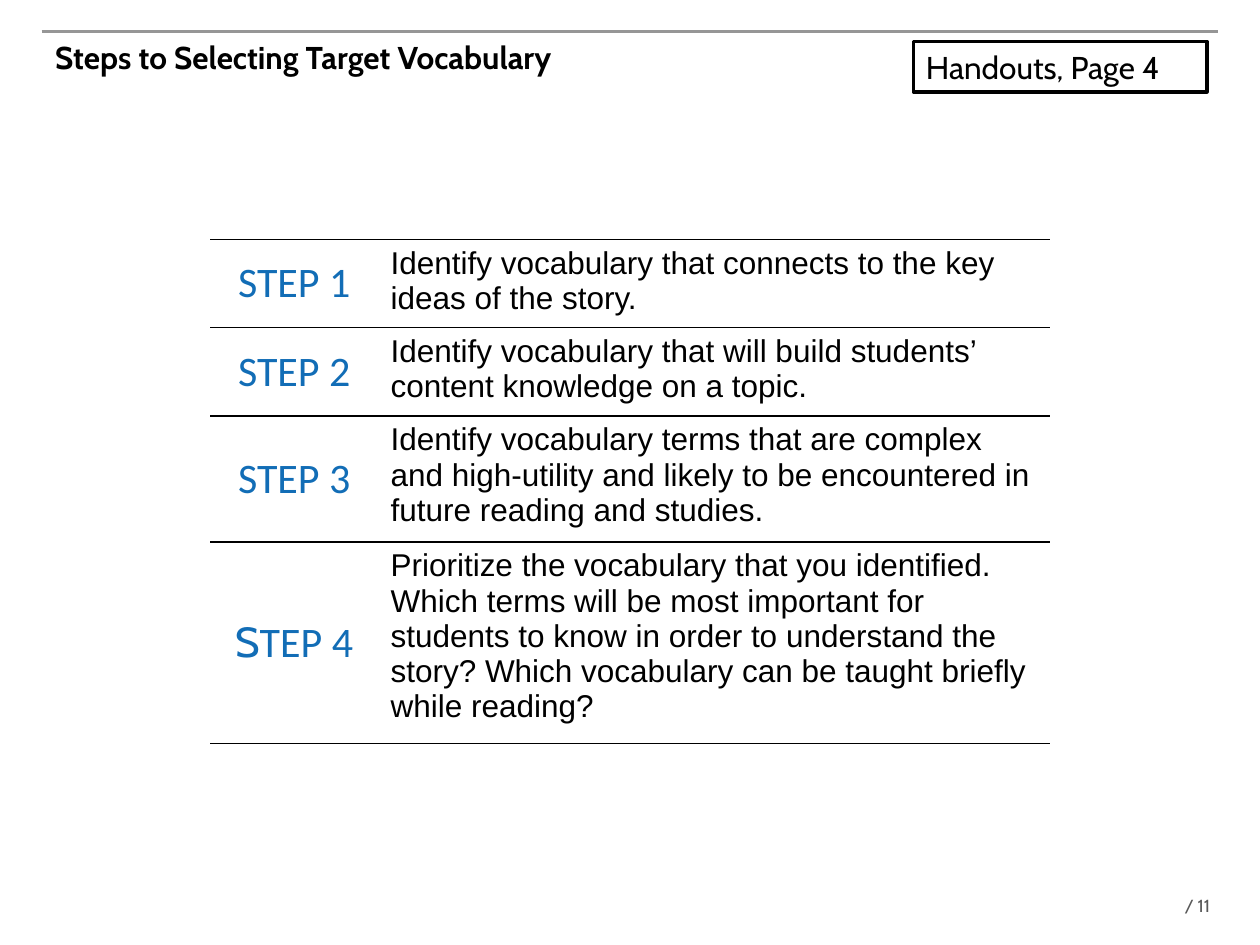
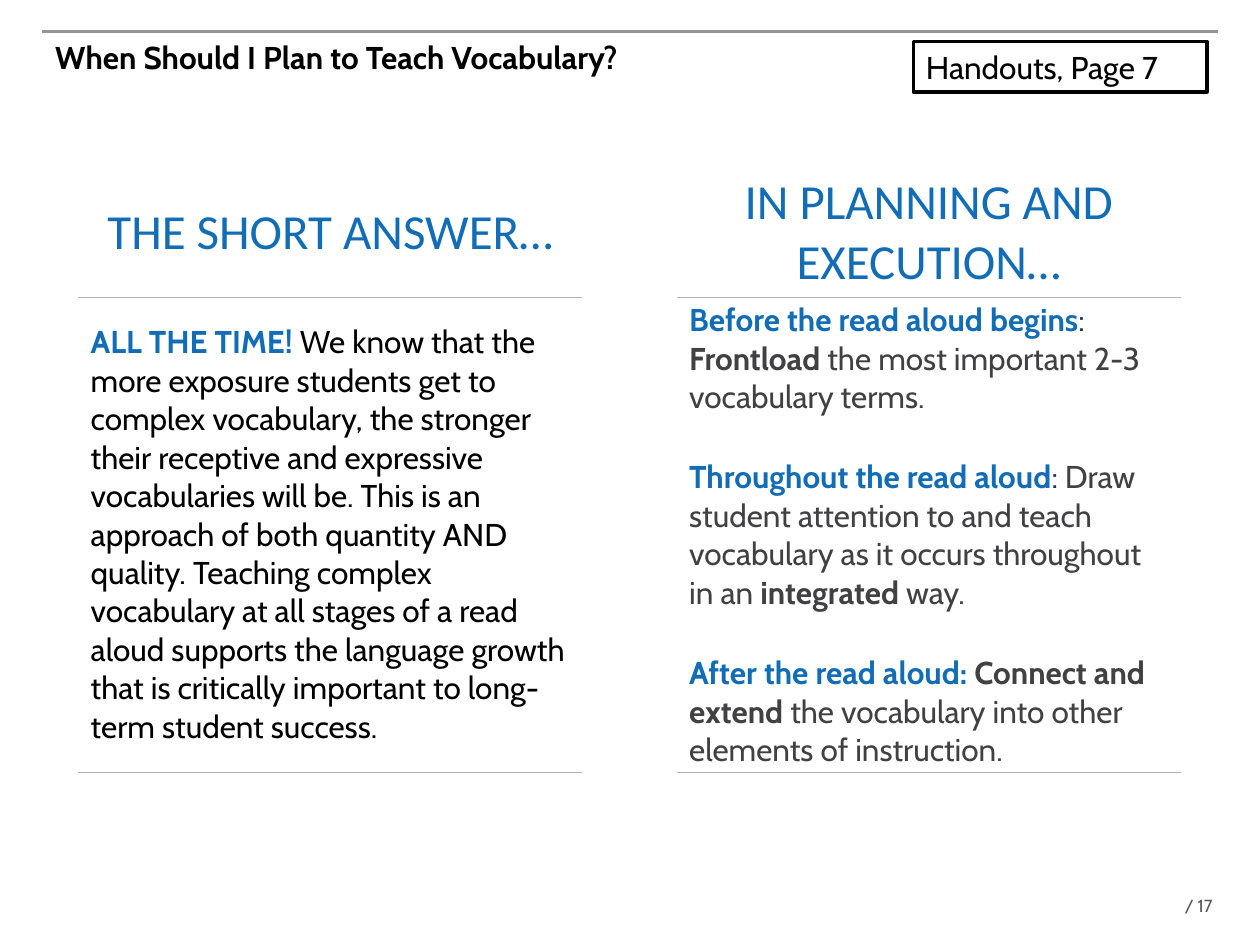
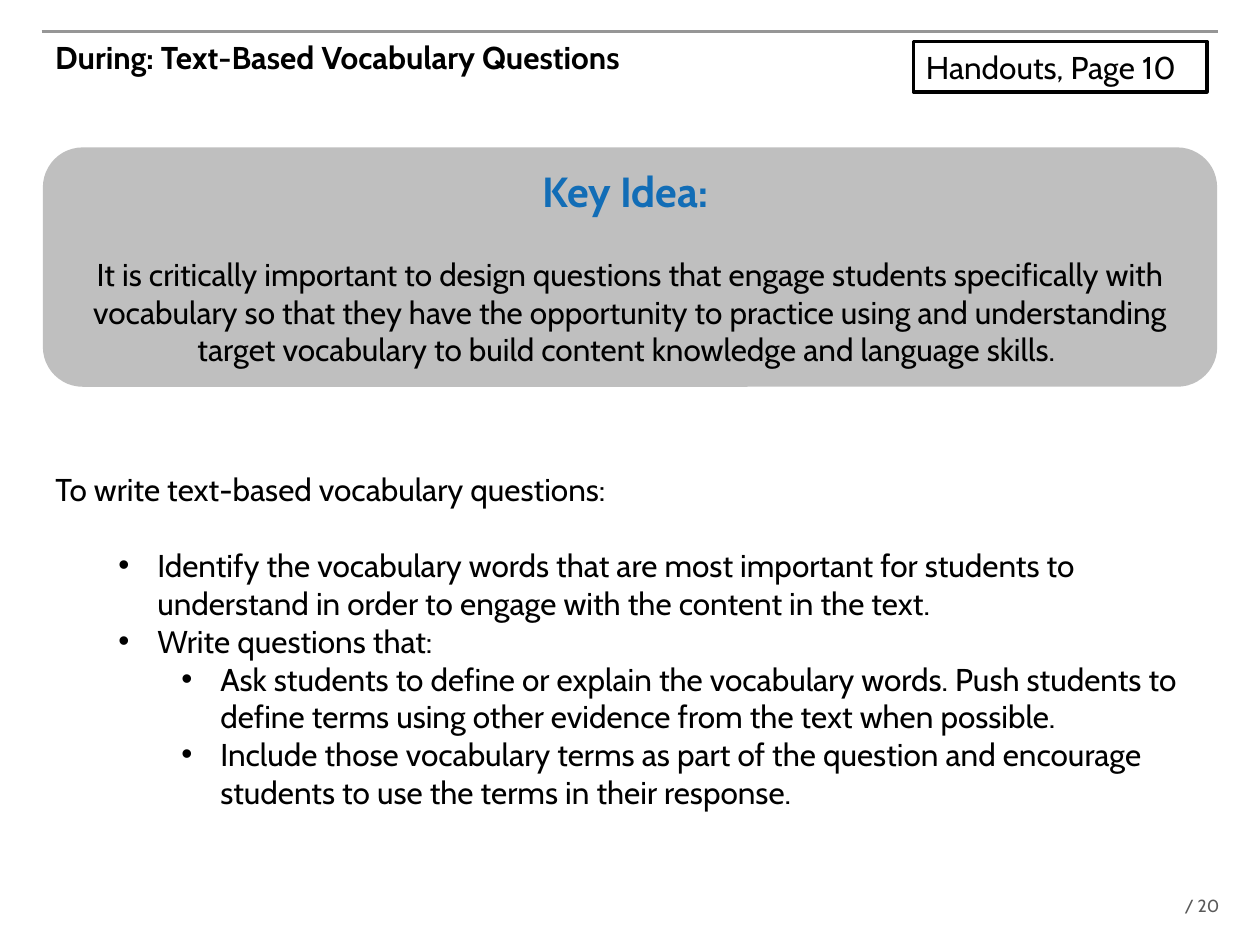
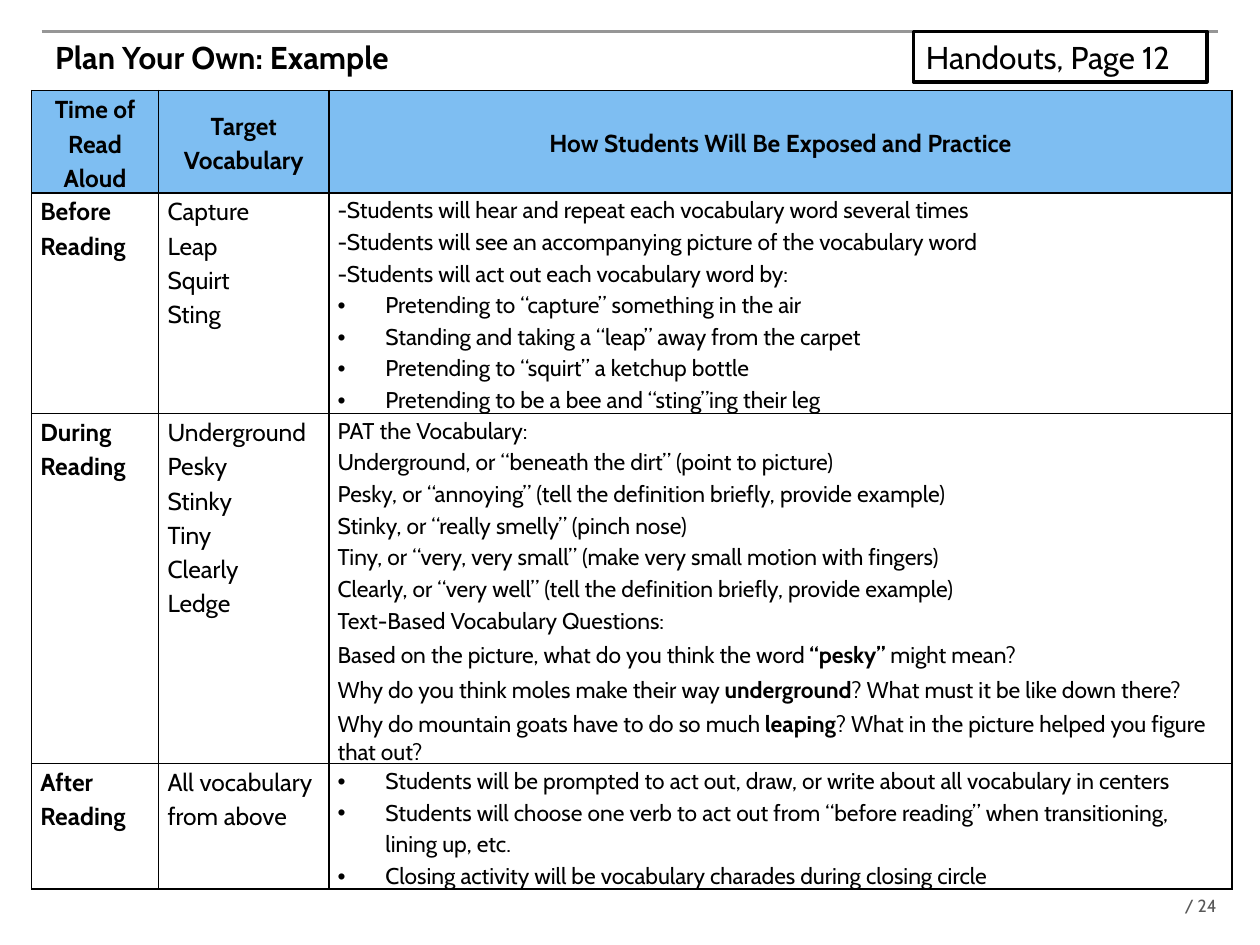
import pptx
import pptx.chart.data
import pptx.dml.color
import pptx.enum.shapes
import pptx.enum.text
import pptx.oxml
import pptx.oxml.ns
import pptx.util
from pptx.util import Inches

BLACK, WHITE, BLUE, DARK = "000000", "FFFFFF", "126DB6", "414042"
NAVY, RULE, GREY, PANEL, HEADER = "133558", "969696", "B3B2B4", "BFBFBF", "7EBEF2"
FOOTER_GREY = "595959"
CENTER = pptx.enum.text.PP_ALIGN.CENTER
LEFT = pptx.enum.text.PP_ALIGN.LEFT
MIDDLE = pptx.enum.text.MSO_ANCHOR.MIDDLE
TOP = pptx.enum.text.MSO_ANCHOR.TOP

# Run formats
BODY = {"name": "Cabin", "size": 18, "color": BLACK, "bold": False}
TITLE = {**BODY, "bold": True}
FOOTER = {**BODY, "size": 10, "color": FOOTER_GREY}
STEP = {**BODY, "name": "Calibri", "size": 24, "color": BLUE}
STEP_TEXT = {**BODY, "name": "Arial"}
ANSWER_HEAD = {**STEP, "size": 28}
KEY = {**TITLE, "size": 24, "color": BLUE}
PLAN = {**BODY, "size": 14}
PLAN_HEAD = {**PLAN, "bold": True}
PRACTICE = {**BODY, "size": 13}
BLUE_BOLD = {"color": BLUE, "bold": True}
BOLD = {"bold": True}
DARK_TEXT = {"color": DARK}
DARK_BOLD = {"color": DARK, "bold": True}

# A paragraph is a string, or a dict whose "runs" are strings or (text, format).
SLIDES = [
    {"title": "Steps to Selecting Target Vocabulary", "handout": 4, "page": 11},
    {"title": "When Should I Plan to Teach Vocabulary?", "handout": 7, "page": 17},
    {"title": "During: Text-Based Vocabulary Questions", "handout": 10, "page": 20},
    {"title": "Plan Your Own: Example", "handout": 12, "page": 24, "handout_top": 0.25},
]

STEPS = [
    ("STEP 1", "Identify vocabulary that connects to the key ideas of the story."),
    ("STEP 2", "Identify vocabulary that will build students’ content knowledge on a topic."),
    ("STEP 3", "Identify vocabulary terms that are complex and high-utility and likely to be "
               "encountered in future reading and studies."),
    ({"runs": [("S", {"name": "Cabin"}), "TEP 4"]},
     "Prioritize the vocabulary that you identified. Which terms will be most important for "
     "students to know in order to understand the story? Which vocabulary can be taught "
     "briefly while reading?"),
]

ANSWER_HEADS = ["THE SHORT ANSWER…", "IN PLANNING AND EXECUTION…"]
SHORT_ANSWER = [{"runs": [
    ("ALL THE TIME! ", BLUE_BOLD),
    "We know that the more exposure students get to complex vocabulary, the stronger their "
    "receptive and expressive vocabularies will be. This is an approach of both quantity AND "
    "quality. Teaching complex vocabulary at all stages of a read aloud supports the language "
    "growth that is critically important to long-term student success."]}]
PLANNING = [
    {"runs": [("Before the read aloud begins", BLUE_BOLD), (": ", {"color": NAVY}),
              ("Frontload ", DARK_BOLD),
              ("the most important 2-3 vocabulary terms.", DARK_TEXT)]},
    {"before": 24,
     "runs": [("Throughout the read aloud", BLUE_BOLD), (": ", {"color": NAVY}),
              ("Draw student attention to and teach vocabulary as it occurs throughout in an ",
               DARK_TEXT),
              ("integrated", DARK_BOLD), (" way.", DARK_TEXT)]},
    {"before": 24,
     "runs": [("After the read aloud: ", BLUE_BOLD), ("Connect and extend", DARK_BOLD),
              (" the vocabulary into other elements of instruction.", DARK_TEXT)]},
]

KEY_IDEA = [
    {"runs": [("Key Idea: ", KEY)]},
    {"before": 22, "runs": [
        "It is critically important to design questions that engage students specifically with "
        "vocabulary so that they have the opportunity to practice using and understanding "
        "target vocabulary to build content knowledge and language skills. "]},
]
OUTER = {"level": 1, "indent": 0.81, "hang": 0.31}
INNER = {"level": 2, "indent": 1.31, "hang": 0.31}
QUESTION_TIPS = [
    "To write text-based vocabulary questions:",
    {**OUTER, "before": 22, "runs": [
        "Identify the vocabulary words that are most important for students to understand in "
        "order to engage with the content in the text."]},
    {**OUTER, "runs": ["Write questions that:"]},
    {**INNER, "runs": [
        "Ask students to define or explain the vocabulary words. Push students to define terms "
        "using other evidence from the text when possible."]},
    {**INNER, "runs": [
        "Include those vocabulary terms as part of the question and encourage students to use "
        "the terms in their response."]},
]


def plan_bullets(*texts):
    return [{"indent": 0.38, "hang": 0.38, "runs": [text]} for text in texts]


def plan_question(start, word, end):
    return {"before": 4, "spacing": 1.0, "runs": [start, (word, BOLD), end]}


PLAN_HEADS = ["Time of Read Aloud", "Target Vocabulary",
              "How Students Will Be Exposed and Practice"]
PLAN_ROWS = [
    ("Before Reading", ["Capture", "Leap", "Squirt", "Sting"], [
        "-Students will hear and repeat each vocabulary word several times",
        "-Students will see an accompanying picture of the vocabulary word",
        "-Students will act out each vocabulary word by:",
        *plan_bullets("Pretending to “capture” something in the air",
                      "Standing and taking a “leap” away from the carpet",
                      "Pretending to “squirt” a ketchup bottle",
                      "Pretending to be a bee and “sting”ing their leg")]),
    ("During Reading", ["Underground", "Pesky", "Stinky", "Tiny", "Clearly", "Ledge"], [
        "PAT the Vocabulary:",
        "Underground, or “beneath the dirt” (point to picture)",
        "Pesky, or “annoying” (tell the definition briefly, provide example)",
        "Stinky, or “really smelly” (pinch nose)",
        "Tiny, or “very, very small” (make very small motion with fingers)",
        "Clearly, or “very well” (tell the definition briefly, provide example)",
        "Text-Based Vocabulary Questions:",
        plan_question("Based on the picture, what do you think the word ", "“pesky” ",
                      "might mean?"),
        plan_question("Why do you think moles make their way ", "underground",
                      "? What must it be like down there?"),
        plan_question("Why do mountain goats have to do so much ", "leaping",
                      "? What in the picture helped you figure that out?")]),
    ("After Reading", ["All vocabulary from above"], plan_bullets(
        "Students will be prompted to act out, draw, or write about all vocabulary in centers",
        "Students will choose one verb to act out from “before reading” when transitioning, "
        "lining up, etc.",
        "Closing activity will be vocabulary charades during closing circle")),
]


def rgb(color):
    return pptx.dml.color.RGBColor.from_string(color)


def add_xml(parent, xml):
    namespace = pptx.oxml.ns.nsdecls("a")
    parent.append(pptx.oxml.parse_xml(xml.replace("/>", f" {namespace}/>", 1)
                                      if xml.count("<") == 1
                                      else xml.replace(">", f" {namespace}>", 1)))


def write(frame, paragraphs, font, align=LEFT, spacing=None):
    """Fill a text frame, each run taking the base font and its own changes."""
    frame.word_wrap = True
    for index, content in enumerate(paragraphs):
        if isinstance(content, str):
            content = {"runs": [content]}
        paragraph = frame.paragraphs[0] if index == 0 else frame.add_paragraph()
        if "indent" in content:
            properties = paragraph._p.get_or_add_pPr()
            properties.set("marL", str(Inches(content["indent"])))
            properties.set("indent", str(-Inches(content["hang"])))
            add_xml(properties, '<a:buFont typeface="Arial"/>')
            add_xml(properties, '<a:buChar char="•"/>')
        layout = {"alignment": align, "level": content.get("level", 0),
                  "line_spacing": content.get("spacing", spacing),
                  "space_before": pptx.util.Pt(content.get("before", 0))}
        for name, value in layout.items():
            setattr(paragraph, name, value)
        for part in content["runs"]:
            text, changes = (part, {}) if isinstance(part, str) else part
            look = {**font, **changes}
            run = paragraph.add_run()
            run.text = text
            run.font.color.rgb = rgb(look["color"])
            for name, value in (("name", look["name"]), ("bold", look["bold"]),
                                ("size", pptx.util.Pt(look["size"]))):
                setattr(run.font, name, value)


def add_text(slide, box, paragraphs, font, inset=None):
    frame = slide.shapes.add_textbox(*map(Inches, box)).text_frame
    if inset is not None:
        for side in ("left", "top", "right", "bottom"):
            setattr(frame, f"margin_{side}", Inches(inset))
    write(frame, paragraphs, font)


def add_panel(slide, kind, box, fill, paragraphs, font, align=LEFT, outline=None):
    panel = slide.shapes.add_shape(kind, *map(Inches, box))
    panel.shadow.inherit = False
    panel.fill.solid()
    panel.fill.fore_color.rgb = rgb(fill)
    if outline:
        panel.line.color.rgb = rgb(outline)
        panel.line.width = pptx.util.Pt(2)
    else:
        panel.line.fill.background()
    panel.text_frame.vertical_anchor = MIDDLE
    write(panel.text_frame, paragraphs, font, align)


def add_grid(slide, left, top, widths, heights):
    frame = slide.shapes.add_table(len(heights), len(widths), Inches(left), Inches(top),
                                   Inches(sum(widths)), Inches(sum(heights)))
    table = frame.table
    table.first_row = table.horz_banding = False
    for column, width in zip(table.columns, widths):
        column.width = Inches(width)
    for row, height in zip(table.rows, heights):
        row.height = Inches(height)
    return table


def fill_cell(cell, paragraphs, font, sides="", border=BLACK, fill=None, align=LEFT,
              anchor=TOP, margins=(0.1, 0.05), spacing=None):
    """Write one cell; sides names the edges drawn, out of L, R, T and B."""
    properties = cell._tc.get_or_add_tcPr()
    for side in "LRTB":
        paint = (f'<a:solidFill><a:srgbClr val="{border}"/></a:solidFill>'
                 if side in sides else "<a:noFill/>")
        add_xml(properties, f'<a:ln{side} w="12700">{paint}</a:ln{side}>')
    if fill:
        cell.fill.solid()
        cell.fill.fore_color.rgb = rgb(fill)
    else:
        cell.fill.background()
    across, down = map(Inches, margins)
    layout = {"margin_left": across, "margin_right": across, "margin_top": down,
              "margin_bottom": down, "vertical_anchor": anchor}
    for name, value in layout.items():
        setattr(cell, name, value)
    write(cell.text_frame, paragraphs, font, align, spacing)


def add_frame(deck, title, handout, page, handout_top=0.33):
    """Start a slide with the rule, title, handout box and page count."""
    slide = deck.slides.add_slide(deck.slide_layouts[6])
    add_text(slide, (9.37, 7.1, 0.66, 0.17), [f" / {page}"], FOOTER, inset=0)
    rule = slide.shapes.add_connector(pptx.enum.shapes.MSO_CONNECTOR.STRAIGHT,
                                      *map(Inches, (0.33, 0.25, 9.67, 0.25)))
    rule.line.color.rgb = rgb(RULE)
    rule.line.width = pptx.util.Pt(2)
    add_xml(rule._element.spPr, "<a:effectLst/>")
    add_text(slide, (0.34, 0.25, 6.9, 0.92), [title], TITLE)
    add_panel(slide, pptx.enum.shapes.MSO_SHAPE.RECTANGLE, (7.25, handout_top, 2.33, 0.4),
              WHITE, [f"Handouts, Page {handout}"], BODY, outline=BLACK)
    return slide


def build_steps(slide):
    table = add_grid(slide, 1.67, 1.9, [1.33, 5.33], [0.7, 0.7, 1, 1.6])
    for row, (step, text) in enumerate(STEPS):
        fill_cell(table.cell(row, 0), [step], STEP, "TB", align=CENTER, anchor=MIDDLE)
        fill_cell(table.cell(row, 1), [text], STEP_TEXT, "TB")


def build_answers(slide):
    table = add_grid(slide, 0.62, 1.33, [4, 0.75, 4], [1.03, 3.77])
    look = {"border": GREY, "margins": (0.1, 0.03)}
    for column, head, body, anchor in zip((0, 2), ANSWER_HEADS, (SHORT_ANSWER, PLANNING),
                                          (MIDDLE, TOP)):
        fill_cell(table.cell(0, column), [head], ANSWER_HEAD, "B", align=CENTER,
                  anchor=MIDDLE, **look)
        fill_cell(table.cell(1, column), body, BODY, "TB", anchor=anchor, **look)
    for row in range(2):
        fill_cell(table.cell(row, 1), [], BODY)


def build_questions(slide):
    add_panel(slide, pptx.enum.shapes.MSO_SHAPE.ROUNDED_RECTANGLE, (0.34, 1.17, 9.32, 1.9),
              PANEL, KEY_IDEA, BODY, CENTER)
    add_text(slide, (0.34, 3.68, 9.32, 2.83), QUESTION_TIPS, BODY)


def build_plan(slide):
    table = add_grid(slide, 0.25, 0.72, [1.01, 1.35, 7.17], [0.81, 1.75, 2.77, 0.99])
    look = {"sides": "LRTB", "margins": (0.07, 0), "spacing": 1.15}
    for column, head in enumerate(PLAN_HEADS):
        fill_cell(table.cell(0, column), [head], PLAN_HEAD, fill=HEADER, align=CENTER,
                  anchor=MIDDLE, **look)
    for row, (time, words, practice) in enumerate(PLAN_ROWS, 1):
        columns = (([time], PLAN_HEAD), (words, PLAN), (practice, PRACTICE))
        for column, (paragraphs, font) in enumerate(columns):
            fill_cell(table.cell(row, column), paragraphs, font, **look)


def main():
    deck = pptx.Presentation()
    deck.slide_width, deck.slide_height = Inches(10), Inches(7.5)
    builders = (build_steps, build_answers, build_questions, build_plan)
    for heading, build in zip(SLIDES, builders):
        build(add_frame(deck, **heading))
    deck.save("out.pptx")


if __name__ == "__main__":
    main()
